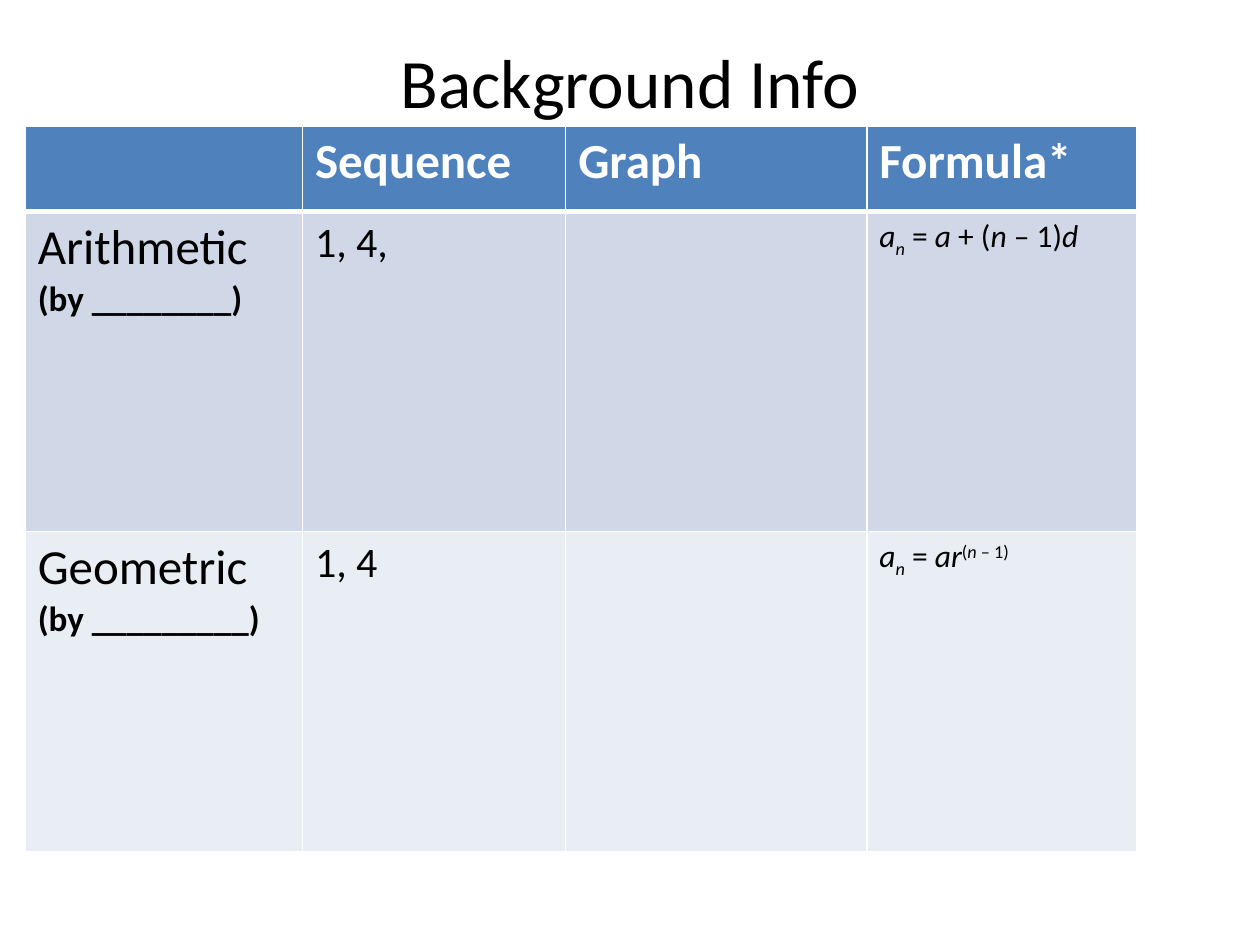
import lxml.etree
import pptx
import pptx.dml.color
import pptx.enum.text
import pptx.oxml.ns
import pptx.util

Inches = pptx.util.Inches
qn = pptx.oxml.ns.qn


def color(hex_text):
    return pptx.dml.color.RGBColor.from_string(hex_text)


def write(paragraph, text, size=18, ink="000000", bold=False, italic=False,
          baseline=0, font="Calibri"):
    run = paragraph.add_run()
    run.text = text
    run.font.name = font
    run.font.size = pptx.util.Pt(size)
    run.font.bold = bold
    run.font.italic = italic
    run.font.color.rgb = color(ink)
    if baseline:
        run.font._element.set("baseline", str(baseline * 1000))


class Deck:
    header_fill = "4F81BD"
    band_fills = ["D0D8E8", "E9EDF4"]
    rule = "FFFFFF"

    def __init__(self, width, height):
        self.show = pptx.Presentation()
        self.show.slide_width = Inches(width)
        self.show.slide_height = Inches(height)
        self.slide = self.show.slides.add_slide(self.show.slide_layouts[5])

    def title(self, text, left, top, width, height, size):
        heading = self.slide.shapes.title
        heading.left, heading.top = Inches(left), Inches(top)
        heading.width, heading.height = Inches(width), Inches(height)
        frame = heading.text_frame
        frame.auto_size = pptx.enum.text.MSO_AUTO_SIZE.NONE
        frame.vertical_anchor = pptx.enum.text.MSO_ANCHOR.MIDDLE
        frame.paragraphs[0].alignment = pptx.enum.text.PP_ALIGN.CENTER
        write(frame.paragraphs[0], text, size=size)

    def borders(self, cell, bottom):
        properties = cell._tc.get_or_add_tcPr()
        for side, points in (("L", 1), ("R", 1), ("T", 1), ("B", bottom)):
            line = lxml.etree.SubElement(properties, qn("a:ln" + side),
                                         w=str(pptx.util.Pt(points)))
            fill = lxml.etree.SubElement(line, qn("a:solidFill"))
            lxml.etree.SubElement(fill, qn("a:srgbClr"), val=self.rule)

    def table(self, rows, left, top, widths, heights):
        grid = self.slide.shapes.add_table(
            len(rows), len(widths), Inches(left), Inches(top),
            Inches(sum(widths)), Inches(sum(heights))).table
        for column, width in zip(grid.columns, widths):
            column.width = Inches(width)
        for index, (row, height) in enumerate(zip(rows, heights)):
            grid.rows[index].height = Inches(height)
            fill = self.band_fills[(index - 1) % 2] if index else self.header_fill
            for cell, lines in zip(grid.rows[index].cells, row):
                self.borders(cell, bottom=1 if index else 3)
                cell.fill.solid()
                cell.fill.fore_color.rgb = color(fill)
                for number, line in enumerate(lines):
                    frame = cell.text_frame
                    paragraph = frame.add_paragraph() if number else frame.paragraphs[0]
                    for text, style in line:
                        write(paragraph, text, **style)


# Text styles
header = dict(size=28, ink="FFFFFF", bold=True)
kind = dict(size=28)
hint = dict(size=20, bold=True)
terms = dict(size=24)
plain = {}
variable = dict(italic=True)
index_style = dict(italic=True, baseline=-25)
power = dict(baseline=30)
power_variable = dict(italic=True, baseline=30)

# Formulas
nth_term = [("a", variable), ("n", index_style), ("\u00a0=\u00a0", plain)]
arithmetic = nth_term + [("a", variable), ("\u00a0+ (", plain), ("n", variable),
                         ("\u00a0\u2013\u00a01)", plain), ("d", variable)]
geometric = nth_term + [("ar", variable), ("(", power), ("n", power_variable),
                        ("\u00a0\u2013 1)", power)]

# Table content: each cell is a list of lines, each line a list of runs
comparison = [
    [[]] + [[[(name, header)]] for name in ("Sequence", "Graph", "Formula*")],
    [[[("Arithmetic", kind)], [("(by ________)", hint)]],
     [[("1, 4,", terms)]], [], [arithmetic]],
    [[[("Geometric", kind)], [("(by _________)", hint)]],
     [[("1, 4", terms)]], [], [geometric]],
]

# Slide
deck = Deck(10, 7.5)
deck.title("Background Info", 0.5, 0.3, 9, 0.69, size=39.6)
deck.table(comparison, 0.2, 1, widths=[2.2, 2.09, 2.39, 2.14],
           heights=[0.68, 2.54, 2.54])
deck.show.save("out.pptx")
